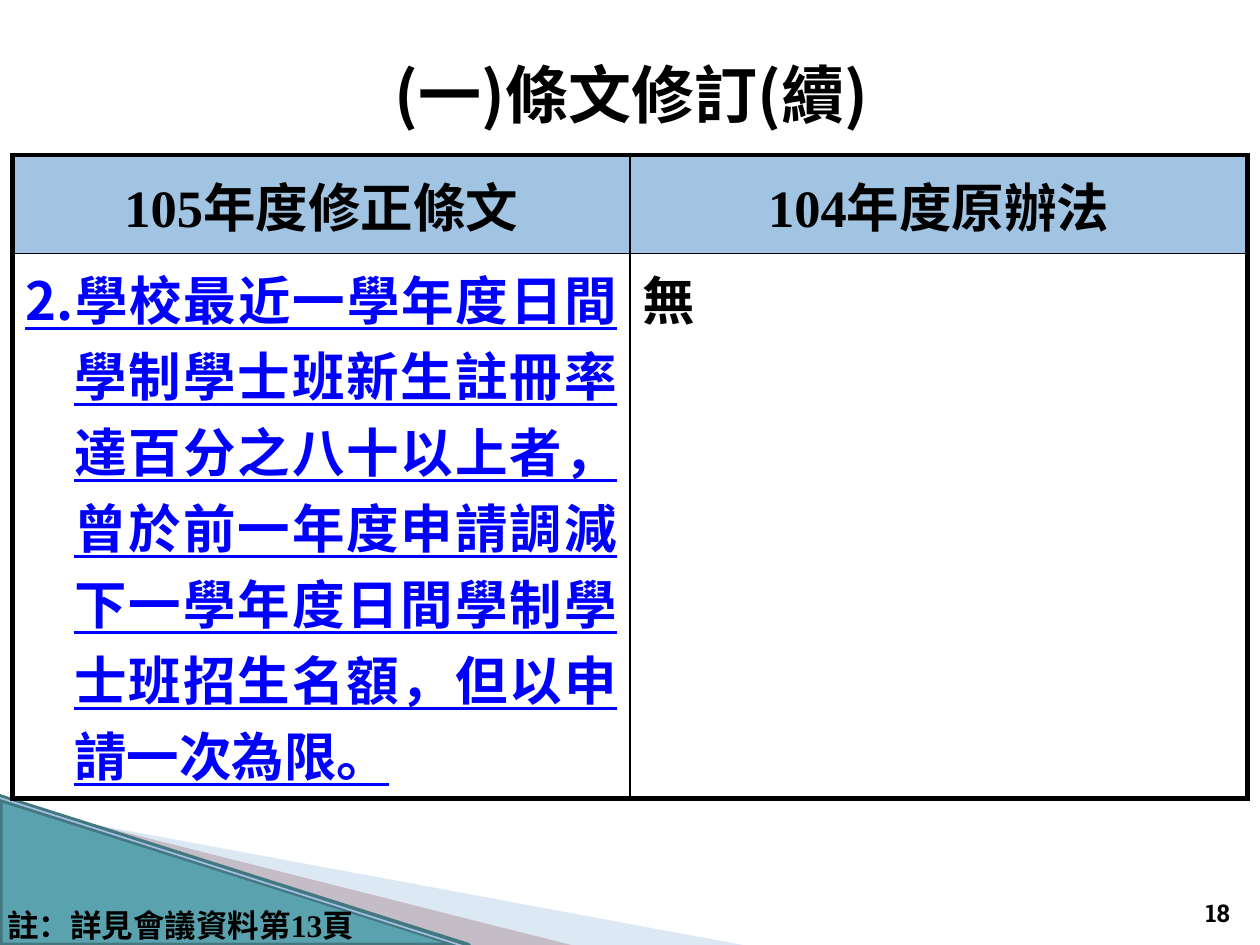
from lxml import etree
from pptx import Presentation
from pptx.dml.color import RGBColor
from pptx.enum.shapes import MSO_CONNECTOR, MSO_SHAPE
from pptx.enum.text import MSO_ANCHOR, MSO_AUTO_SIZE, PP_ALIGN
from pptx.oxml.ns import qn
from pptx.util import Pt

TOP, MIDDLE, BOTTOM = MSO_ANCHOR.TOP, MSO_ANCHOR.MIDDLE, MSO_ANCHOR.BOTTOM
LEFT, CENTER, RIGHT, JUSTIFY = PP_ALIGN.LEFT, PP_ALIGN.CENTER, PP_ALIGN.RIGHT, PP_ALIGN.JUSTIFY
BLACK = RGBColor(0x00, 0x00, 0x00)
BLUE = RGBColor(0x00, 0x00, 0xFF)
HEADER_BLUE = RGBColor(0xA1, 0xC4, 0xE3)
PALE_BLUE = RGBColor(0xAB, 0xC6, 0xE6)
MAUVE = RGBColor(0xC4, 0xBC, 0xC6)
TEAL = RGBColor(0x5A, 0xA2, 0xAE)
DARK_TEAL = RGBColor(0x43, 0x78, 0x81)
EDGE_BLUE = RGBColor(0xA4, 0xC1, 0xE3)
CJK, SERIF, SLAB = "Noto Sans CJK SC", "Times New Roman", "Roboto Slab"


def write_text(text_frame, text, size, font_name, align, color=BLACK):
    """Fill the first paragraph with bold text and return the paragraph."""
    paragraph = text_frame.paragraphs[0]
    paragraph.text = text
    paragraph.alignment = align
    font = paragraph.font
    font.size, font.bold, font.name = Pt(size), True, font_name
    font.color.rgb = color
    east_asian = etree.SubElement(font._element, qn("a:ea"))
    east_asian.set("typeface", CJK)
    return paragraph


def add_border(cell, side, width):
    line = etree.SubElement(cell._tc.get_or_add_tcPr(), qn(f"a:ln{side}"), w=str(Pt(width)))
    fill = etree.SubElement(line, qn("a:solidFill"))
    etree.SubElement(fill, qn("a:srgbClr"), val=str(BLACK))


presentation = Presentation()
presentation.slide_width, presentation.slide_height = Pt(720), Pt(540)
slide = presentation.slides.add_slide(presentation.slide_layouts[5])
shapes = slide.shapes

# Corner decoration
bands = [
    (PALE_BLUE, 40, [(39.6, 468.5), (428.4, 540.7), (328.3, 540.7), (39.6, 468)]),
    (MAUVE, 100, [(38.2, 467.3), (329, 540.7), (267.8, 541.4), (38.9, 468)]),
]
for color, opacity, points in bands:
    corners = [(Pt(x), Pt(y)) for x, y in points]
    builder = shapes.build_freeform(*corners[0])
    builder.add_line_segments(corners[1:])
    band = builder.convert_to_shape()
    band.shadow.inherit = False
    band.fill.solid()
    band.fill.fore_color.rgb = color
    band.line.fill.background()
    if opacity < 100:
        color_element = band._element.spPr.find(f"{qn('a:solidFill')}/{qn('a:srgbClr')}")
        etree.SubElement(color_element, qn("a:alpha"), val=str(opacity * 1000))

triangle = shapes.add_shape(MSO_SHAPE.RIGHT_TRIANGLE, Pt(-0.7), Pt(455.8), Pt(267.8), Pt(85))
triangle.shadow.inherit = False
triangle.fill.solid()
triangle.fill.fore_color.rgb = TEAL
triangle.line.color.rgb = DARK_TEAL
triangle.line.width = Pt(4.33)

edge = shapes.add_connector(MSO_CONNECTOR.STRAIGHT, Pt(-0.7), Pt(455.8), Pt(267.1), Pt(541.4))
edge.line.color.rgb = EDGE_BLUE
edge.line.width = Pt(0.95)
etree.SubElement(edge._element.spPr, qn("a:effectLst"))

# Title
title = shapes.title
title.left, title.top, title.width, title.height = Pt(20.2), Pt(29.5), Pt(681.1), Pt(47.5)
title.text_frame.auto_size = MSO_AUTO_SIZE.NONE
title.text_frame.vertical_anchor = MIDDLE
write_text(title.text_frame, "(一)條文修訂(續)", 36, CJK, CENTER)

# Comparison of the articles
table = shapes.add_table(2, 2, Pt(7.2), Pt(88.6), Pt(705.6), Pt(340.6)).table
table.first_row = table.horz_banding = False
table.rows[0].height, table.rows[1].height = Pt(56.2), Pt(284.4)

headings = ["105年度修正條文", "104年度原辦法"]
articles = [
    ("2.學校最近一學年度日間學制學士班新生註冊率達百分之八十以上者，"
     "曾於前一年度申請調減下一學年度日間學制學士班招生名額，但以申請一次為限。", BLUE, 28.1),
    ("無", BLACK, 41.8),
]
for column, (heading, (article, color, hanging)) in enumerate(zip(headings, articles)):
    header, body = table.cell(0, column), table.cell(1, column)
    for row, cell in enumerate((header, body)):
        outer_sides = {"LR"[column], "TB"[row]}
        for side in "LRTB":
            add_border(cell, side, 3 if side in outer_sides else 1)

    header.fill.solid()
    header.fill.fore_color.rgb = HEADER_BLUE
    header.vertical_anchor = MIDDLE
    write_text(header.text_frame, heading, 30, SERIF, CENTER)

    body.fill.background()
    paragraph = write_text(body.text_frame, article, 30, CJK, JUSTIFY, color)
    paragraph.font.underline = color == BLUE
    properties = paragraph._p.get_or_add_pPr()
    properties.set("marL", str(Pt(hanging)))
    properties.set("indent", str(-Pt(hanging)))

# Footnote and page number
footers = [
    ("註：詳見會議資料第13頁", 18, SERIF, LEFT, TOP, (-2.9, 514.1, 226.8, 28.8)),
    ("18", 14, SLAB, RIGHT, BOTTOM, (666, 504.7, 43.9, 28.8)),
]
for text, size, font_name, align, anchor, box in footers:
    text_frame = shapes.add_textbox(*map(Pt, box)).text_frame
    text_frame.word_wrap = True
    text_frame.vertical_anchor = anchor
    write_text(text_frame, text, size, font_name, align)

presentation.save("out.pptx")
